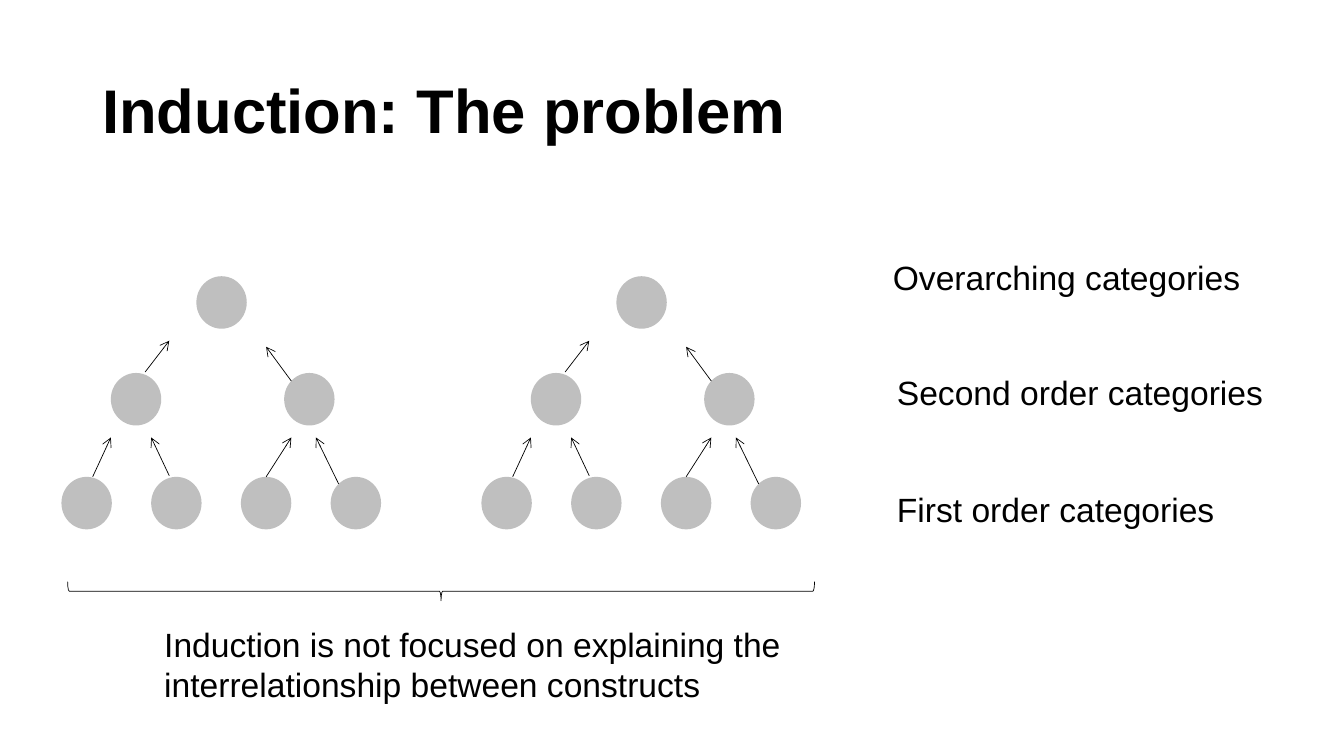
"""Build the slide on the problem of induction, with two category trees."""
from lxml import etree
from pptx import Presentation
from pptx.dml.color import RGBColor
from pptx.enum.shapes import MSO_CONNECTOR, MSO_SHAPE
from pptx.enum.text import MSO_ANCHOR
from pptx.oxml.ns import qn
from pptx.util import Pt

STRAIGHT = MSO_CONNECTOR.STRAIGHT
OVAL = MSO_SHAPE.OVAL
LEFT_BRACE = MSO_SHAPE.LEFT_BRACE
TOP, MIDDLE = MSO_ANCHOR.TOP, MSO_ANCHOR.MIDDLE

COLORS = {"ink": "000000", "node": "BFBFBF"}
FONT = "Arial"
NODE_WIDTH, NODE_HEIGHT = 36, 37.5
LEAF_STEP = 64.1
TREE_LEFTS = (43.9, 343.9)
NODES = [(index * LEAF_STEP, 340.6) for index in range(4)] + [
    (35.3, 266.4), (159.1, 266.4), (96.4, 197.3)]
ARROWS = [
    (22.3, 340.6, 35.3, 312.5),
    (77, 339.8, 64.1, 312.5),
    (146.2, 340.6, 164.2, 312.5),
    (198, 345.6, 181.8, 312.5),
    (59.8, 265.7, 77, 243.4),
    (164.2, 272.2, 146.2, 247.7),
]
LABELS = [
    ("Overarching categories", 630.7, 180, 263),
    ("Second order categories", 633.6, 262.1, 297.4),
    ("First order categories", 633.6, 345.6, 282.2),
    ("Induction is not focused on explaining the interrelationship "
     "between constructs", 110.2, 442.1, 467.3),
]


def color(name):
    return RGBColor.from_string(COLORS[name])


def style_line(line):
    line.color.rgb = color("ink")
    line.width = Pt(0.5)


def add_text(slide, text, left, top, width, height=36, size=24, bold=False,
             anchor=TOP):
    box = slide.shapes.add_textbox(Pt(left), Pt(top), Pt(width), Pt(height))
    frame = box.text_frame
    frame.word_wrap = True
    frame.vertical_anchor = anchor
    frame.text = text
    font = frame.paragraphs[0].runs[0].font
    font.name, font.size, font.bold = FONT, Pt(size), bold
    font.color.rgb = color("ink")
    return box


def add_node(shapes, left, top):
    node = shapes.add_shape(OVAL, Pt(left), Pt(top), Pt(NODE_WIDTH), Pt(NODE_HEIGHT))
    node.shadow.inherit = False
    node.fill.solid()
    node.fill.fore_color.rgb = color("node")
    node.line.fill.background()


def add_arrow(shapes, start_x, start_y, end_x, end_y):
    arrow = shapes.add_connector(
        STRAIGHT, Pt(start_x), Pt(start_y), Pt(end_x), Pt(end_y))
    style_line(arrow.line)
    etree.SubElement(arrow.line._get_or_add_ln(), qn("a:tailEnd"), type="arrow")
    etree.SubElement(arrow._element.spPr, qn("a:effectLst"))


def add_tree(slide, left):
    shapes = slide.shapes.add_group_shape().shapes
    for x, y in NODES:
        add_node(shapes, left + x, y)
    for start_x, start_y, end_x, end_y in ARROWS:
        add_arrow(shapes, left + start_x, start_y, left + end_x, end_y)


def add_brace(slide, left, top, width, height):
    brace = slide.shapes.add_shape(
        LEFT_BRACE, Pt(left), Pt(top), Pt(width), Pt(height))
    brace.rotation = 270
    brace.shadow.inherit = False
    brace.fill.background()
    style_line(brace.line)


def main():
    presentation = Presentation()
    presentation.slide_width, presentation.slide_height = Pt(960), Pt(540)
    slide = presentation.slides.add_slide(presentation.slide_layouts[6])
    title = add_text(slide, "Induction: The problem", 66, 28.8, 828, 104.4,
                     size=44, bold=True, anchor=MIDDLE)
    title.text_frame.paragraphs[0].line_spacing = 0.9
    for left in TREE_LEFTS:
        add_tree(slide, left)
    add_brace(slide, 308.2, 155.5, 13.7, 533.5)
    for text, left, top, width in LABELS:
        add_text(slide, text, left, top, width)
    presentation.save("out.pptx")


if __name__ == "__main__":
    main()
